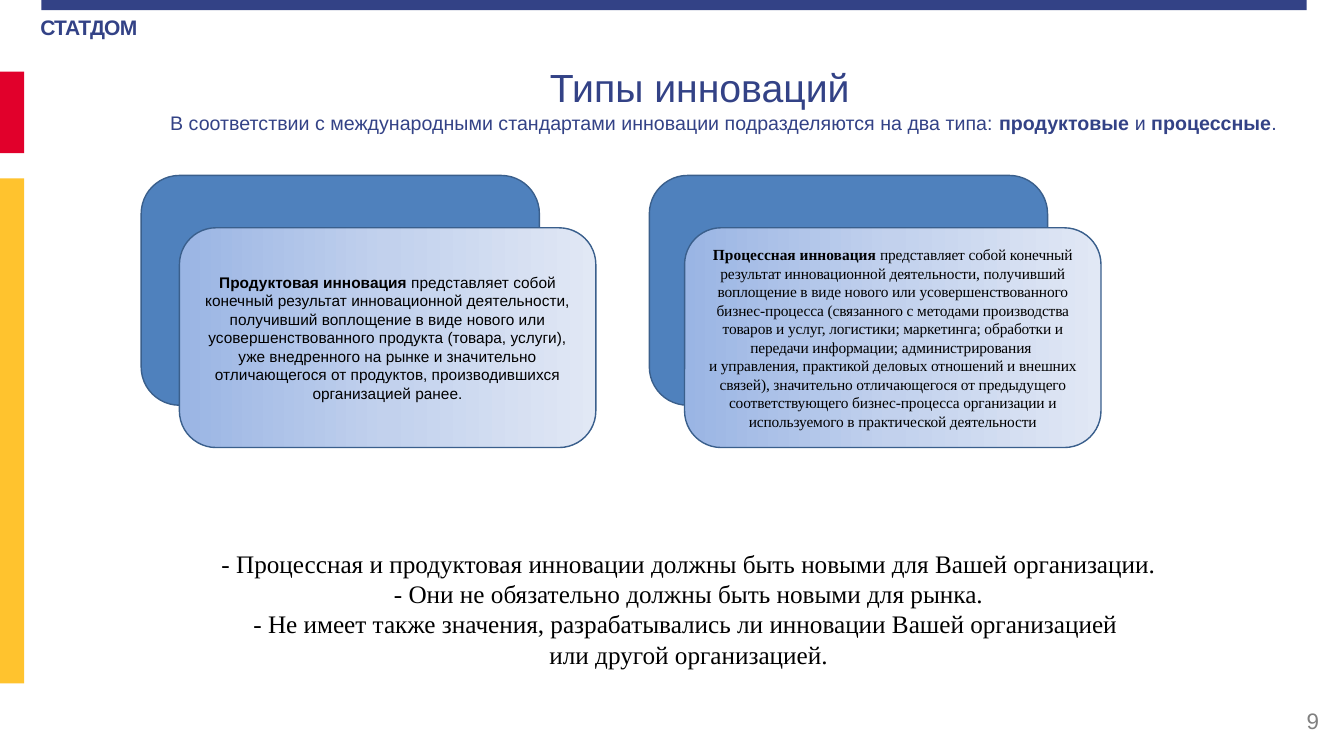
from copy import deepcopy
from dataclasses import dataclass

from pptx import Presentation
from pptx.dml.color import RGBColor
from pptx.enum.shapes import MSO_SHAPE
from pptx.enum.text import MSO_ANCHOR, PP_ALIGN
from pptx.oxml.ns import qn
from pptx.util import Inches, Pt

RECT, ROUND = MSO_SHAPE.RECTANGLE, MSO_SHAPE.ROUNDED_RECTANGLE
LEFT, CENTER, RIGHT, JUSTIFY = PP_ALIGN.LEFT, PP_ALIGN.CENTER, PP_ALIGN.RIGHT, PP_ALIGN.JUSTIFY
TOP, MIDDLE = MSO_ANCHOR.TOP, MSO_ANCHOR.MIDDLE


@dataclass(frozen=True)
class Theme:
    navy: str = "334286"
    red: str = "E1002B"
    yellow: str = "FFC32E"
    card: str = "4F81BD"
    outline: str = "3A5F8C"
    gradient: tuple = ((0, "9AB5E4"), (0.5, "C2D1ED"), (1, "E1E8F5"))
    black: str = "000000"
    grey: str = "808080"
    sans: str = "Arial"
    serif: str = "Times New Roman"
    title: int = 28
    notes: int = 18
    number: int = 16
    brand: int = 15
    lead: int = 14
    card_text: int = 11


T = Theme()

LEAD = [("В соответствии с международными стандартами инновации подразделяются на два типа: ", False),
        ("продуктовые", True), (" и ", False), ("процессные", True), (".", False)]
# Box, font, term, definition, letter spacing of the definition
CARDS = [
    ((1.4, 1.74, 4.51, 2.7), T.sans, "Продуктовая инновация ",
     "представляет собой конечный результат инновационной деятельности, получивший воплощение "
     "в виде нового или усовершенствованного продукта (товара, услуги), уже внедренного на рынке "
     "и значительно отличающегося от продуктов, производившихся организацией ранее.", 0),
    ((6.44, 1.74, 4.48, 2.7), T.serif, "Процессная инновация ",
     "представляет собой конечный результат инновационной деятельности, получивший воплощение "
     "в виде нового или усовершенствованного бизнес-процесса (связанного с методами производства "
     "товаров и услуг, логистики; маркетинга; обработки и передачи информации; администрирования \n"
     "и управления, практикой деловых отношений и внешних связей), значительно отличающегося "
     "от предыдущего соответствующего бизнес-процесса организации и используемого "
     "в практической деятельности", -0.1),
]
NOTES = ["- Процессная и продуктовая инновации должны быть новыми для Вашей организации.",
         "- Они не обязательно должны быть новыми для рынка.",
         "- Не имеет также значения, разрабатывались ли инновации Вашей организацией \n"
         "или другой организацией."]


def rgb(value):
    return RGBColor.from_string(value)


def add_runs(p, text, font, size, color, bold=False, spacing=0):
    """Add text to a paragraph, turning each newline into a line break."""
    for i, part in enumerate(text.split("\n")):
        if i:
            p.add_line_break()
        r = p.add_run()
        r.text = part
        for name, value in dict(name=font, size=Pt(size), bold=bold).items():
            setattr(r.font, name, value)
        r.font.color.rgb = rgb(color)
        if spacing:
            r.font._element.set("spc", str(round(spacing * 100)))


def frame(sp, anchor=TOP, **margins):
    tf = sp.text_frame
    for name, value in dict(word_wrap=True, vertical_anchor=anchor, **margins).items():
        setattr(tf, name, value)
    return tf


def add_text(s, box, align, anchor=TOP, **margins):
    """Add a text box and return its frame and aligned first paragraph."""
    tf = frame(s.shapes.add_textbox(*map(Inches, box)), anchor, **margins)
    tf.paragraphs[0].alignment = align
    return tf, tf.paragraphs[0]


def add_block(s, kind, box, fill, line=None):
    sp = s.shapes.add_shape(kind, *map(Inches, box))
    sp.shadow.inherit = False
    if isinstance(fill, str):
        sp.fill.solid()
        sp.fill.fore_color.rgb = rgb(fill)
    else:
        set_gradient(sp, fill)
    if line:
        sp.line.color.rgb = rgb(line)
        sp.line.width = Pt(1)
    else:
        sp.line.fill.background()
    return sp


def set_gradient(sp, stops):
    sp.fill.gradient()
    sp.fill.gradient_angle = 0
    gs_list = sp._element.spPr.find(".//" + qn("a:gsLst"))
    while len(gs_list) < len(stops):
        gs_list.append(deepcopy(gs_list[0]))
    for stop, (position, color) in zip(sp.fill.gradient_stops, stops):
        stop.position = position
        stop.color.rgb = rgb(color)


def add_branding(s, width, height):
    """Place the top bar, side stripes, agency name and slide number."""
    add_block(s, RECT, (0.41, 0, width - 0.78, 0.1), T.navy)
    for y, h, color in ((0.71, 0.81, T.red), (1.77, 5.01, T.yellow)):
        add_block(s, RECT, (0, y, 0.24, h), color)
    _, p = add_text(s, (0.4, 0.13, 1.15, 0.32), LEFT, margin_left=0, margin_right=0,
                    margin_top=Inches(0.01), margin_bottom=0)
    add_runs(p, "СТАТДОМ", T.sans, T.brand, T.navy, True, -0.5)
    _, p = add_text(s, (width - 3.15, height - 0.55, 3, 0.4), RIGHT, MIDDLE)
    add_runs(p, "9", T.sans, T.number, T.grey)


def add_heading(s, box):
    tf, p = add_text(s, box, CENTER)
    add_runs(p, "Типы инноваций", T.sans, T.title, T.navy)
    p = tf.add_paragraph()
    p.alignment = JUSTIFY
    p._p.get_or_add_pPr().set("indent", str(Inches(0.5)))
    for text, bold in LEAD:
        add_runs(p, text, T.sans, T.lead, T.navy, bold)


def add_card(s, box, font, term, definition, spacing):
    """Place a back plate at the box's top left and a text plate at its bottom right."""
    x, y, w, h = box
    front_w, front_h = 4.13, 2.18
    add_block(s, ROUND, (x, y, 3.95, 2.28), T.card, T.outline)
    front = add_block(s, ROUND, (x + w - front_w, y + h - front_h, front_w, front_h),
                      T.gradient, T.outline)
    p = frame(front, MIDDLE).paragraphs[0]
    p.alignment = CENTER
    add_runs(p, term, font, T.card_text, T.black, True)
    add_runs(p, definition, font, T.card_text, T.black, spacing=spacing)


def add_notes(s, box):
    tf, p = add_text(s, box, CENTER)
    for i, text in enumerate(NOTES):
        if i:
            p = tf.add_paragraph()
            p.alignment = CENTER
        add_runs(p, text, T.serif, T.notes, T.black)


def main():
    prs = Presentation()
    width, height = 13.33, 7.5
    prs.slide_width, prs.slide_height = Inches(width), Inches(height)
    s = prs.slides.add_slide(prs.slide_layouts[6])
    add_branding(s, width, height)
    add_heading(s, (1.09, 0.58, 11.7, 1.02))
    for card in CARDS:
        add_card(s, *card)
    add_notes(s, (1.56, 5.39, 10.54, 1.42))
    prs.save("out.pptx")


if __name__ == "__main__":
    main()
